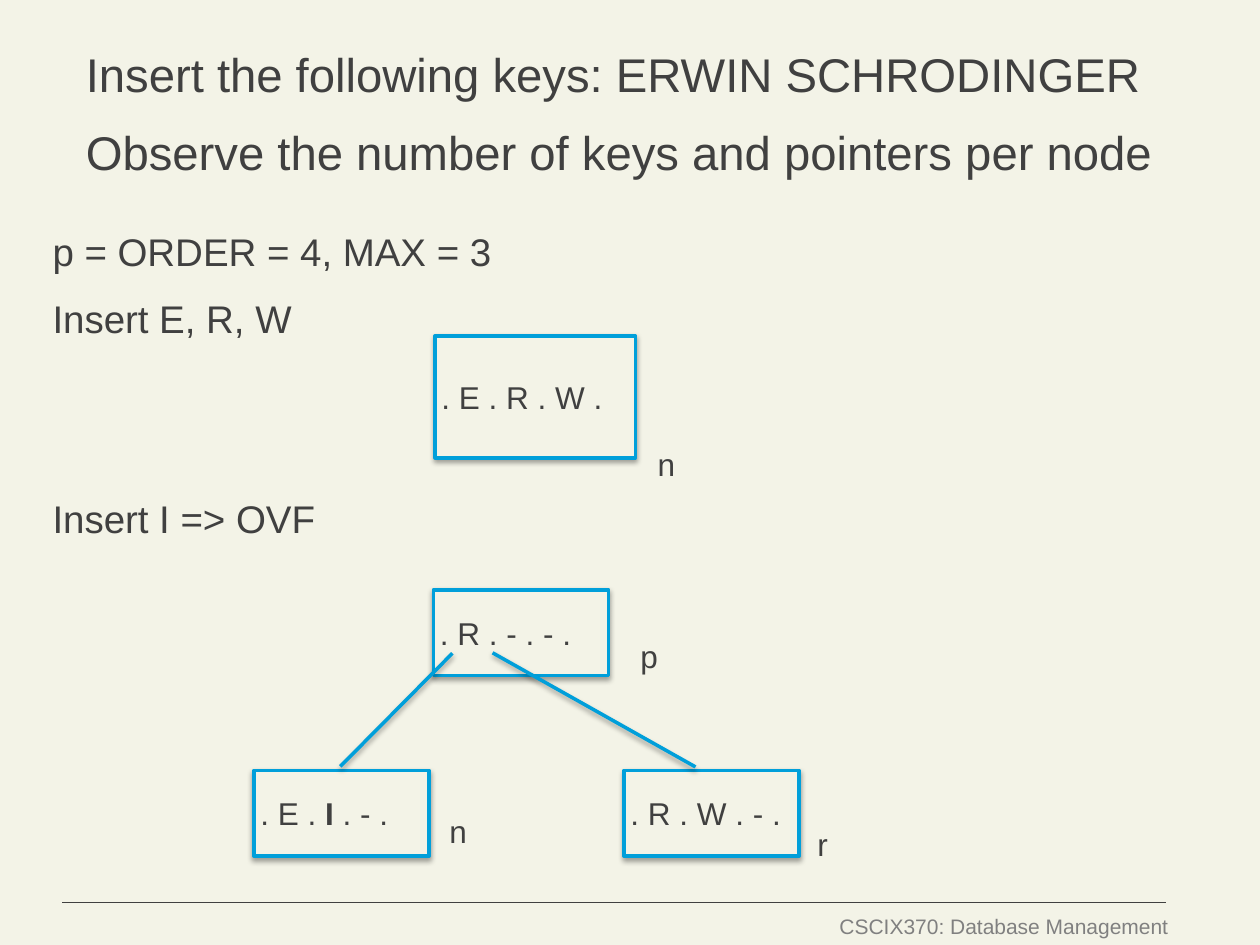
from lxml import etree
from pptx import Presentation
from pptx.dml.color import RGBColor
from pptx.enum.shapes import MSO_CONNECTOR, MSO_SHAPE
from pptx.enum.text import MSO_ANCHOR, PP_ALIGN
from pptx.oxml import parse_xml
from pptx.oxml.ns import nsdecls, qn
from pptx.util import Cm, Pt

STRAIGHT = MSO_CONNECTOR.STRAIGHT
RECTANGLE = MSO_SHAPE.RECTANGLE
TOP, MIDDLE = MSO_ANCHOR.TOP, MSO_ANCHOR.MIDDLE
LEFT, RIGHT = PP_ALIGN.LEFT, PP_ALIGN.RIGHT
CREAM = RGBColor(0xF3, 0xF3, 0xE7)
BLUE = RGBColor(0x00, 0x9F, 0xDA)
DARK = RGBColor(0x40, 0x40, 0x40)
GREY = RGBColor(0x80, 0x80, 0x80)
SHADOW = (
    f'<a:effectLst {nsdecls("a")}>'
    '<a:outerShdw blurRad="38100" dist="22860" dir="5400000" rotWithShape="0">'
    '<a:srgbClr val="000000"><a:alpha val="35000"/></a:srgbClr>'
    '</a:outerShdw></a:effectLst>'
)


def write(shape, lines, size, color=DARK, align=LEFT, anchor=TOP, wrap=True):
    frame = shape.text_frame
    frame.word_wrap = wrap
    frame.vertical_anchor = anchor
    frame.margin_left = frame.margin_right = Cm(0.13)
    frame.margin_top = frame.margin_bottom = Cm(0.13)
    for index, (space, runs) in enumerate(lines):
        paragraph = frame.add_paragraph() if index else frame.paragraphs[0]
        paragraph.alignment = align
        paragraph.space_before = Pt(space)
        for text, bold in runs:
            run = paragraph.add_run()
            run.text = text
            run.font.name = "Arial"
            run.font.size = Pt(size)
            run.font.bold = bold
            run.font.color.rgb = color


def add_line(start, end, color, width, shadow=None):
    ends = [Cm(value) for value in start + end]
    line = slide.shapes.add_connector(STRAIGHT, *ends)
    line.line.color.rgb = color
    line.line.width = Pt(width)
    properties = line._element.spPr
    if shadow:
        properties.append(parse_xml(shadow))
    else:
        etree.SubElement(properties, qn("a:effectLst"))


presentation = Presentation()
presentation.slide_width = Cm(25.4)
presentation.slide_height = Cm(19.05)
slide = presentation.slides.add_slide(presentation.slide_layouts[6])
slide.background.fill.solid()
slide.background.fill.fore_color.rgb = CREAM

add_line((23.5, 18.2), (1.25, 18.2), DARK, 0.75)
footer = slide.shapes.add_textbox(Cm(16.76), Cm(18.29), Cm(6.93), Cm(0.74))
write(footer, [(0, [("CSCIX370: Database Management", False)])], 12, GREY, RIGHT, wrap=False)

title = slide.shapes.add_textbox(Cm(1.6), Cm(0.79), Cm(23.7), Cm(2.84))
write(title, [
    (0, [("Insert the following keys: ERWIN SCHRODINGER", False)]),
    (12, [("Observe the number of keys and pointers per node", False)]),
], 27)

body = slide.shapes.add_textbox(Cm(0.93), Cm(4.47), Cm(21.82), Cm(13.13))
write(body, [
    (0, [("p = ORDER = 4, MAX = 3", False)]),
    (12, [("Insert E, R, W", False)]),
    (88, [("Insert I => OVF", False)]),
], 22)

nodes = [
    (8.77, 6.77, 4.04, 2.46, [(". E . R . W .", False)]),
    (5.12, 15.53, 3.53, 1.73, [(". E . ", False), ("I", True), (" . - .", False)]),
    (12.58, 15.53, 3.53, 1.73, [(". R . W . - .", False)]),
    (8.74, 11.89, 3.53, 1.73, [(". R . - . - .", False)]),
]
for left, top, width, height, keys in nodes:
    node = slide.shapes.add_shape(RECTANGLE, Cm(left), Cm(top), Cm(width), Cm(height))
    node.fill.solid()
    node.fill.fore_color.rgb = CREAM
    node.line.color.rgb = BLUE
    node.line.width = Pt(2)
    node._element.spPr.append(parse_xml(SHADOW))
    write(node, [(0, keys)], 18, anchor=MIDDLE)

add_line((6.86, 15.45), (9.12, 13.17), BLUE, 2, SHADOW)
add_line((14.02, 15.46), (9.93, 13.16), BLUE, 2, SHADOW)

labels = [
    ("n", 13.13, 8.84, 0.64),
    ("n", 8.93, 16.23, 0.64),
    ("r", 16.35, 16.51, 0.51),
    ("p", 12.78, 12.71, 0.64),
]
for name, left, top, width in labels:
    label = slide.shapes.add_textbox(Cm(left), Cm(top), Cm(width), Cm(0.97))
    write(label, [(0, [(name, False)])], 18, wrap=False)

presentation.save("out.pptx")
